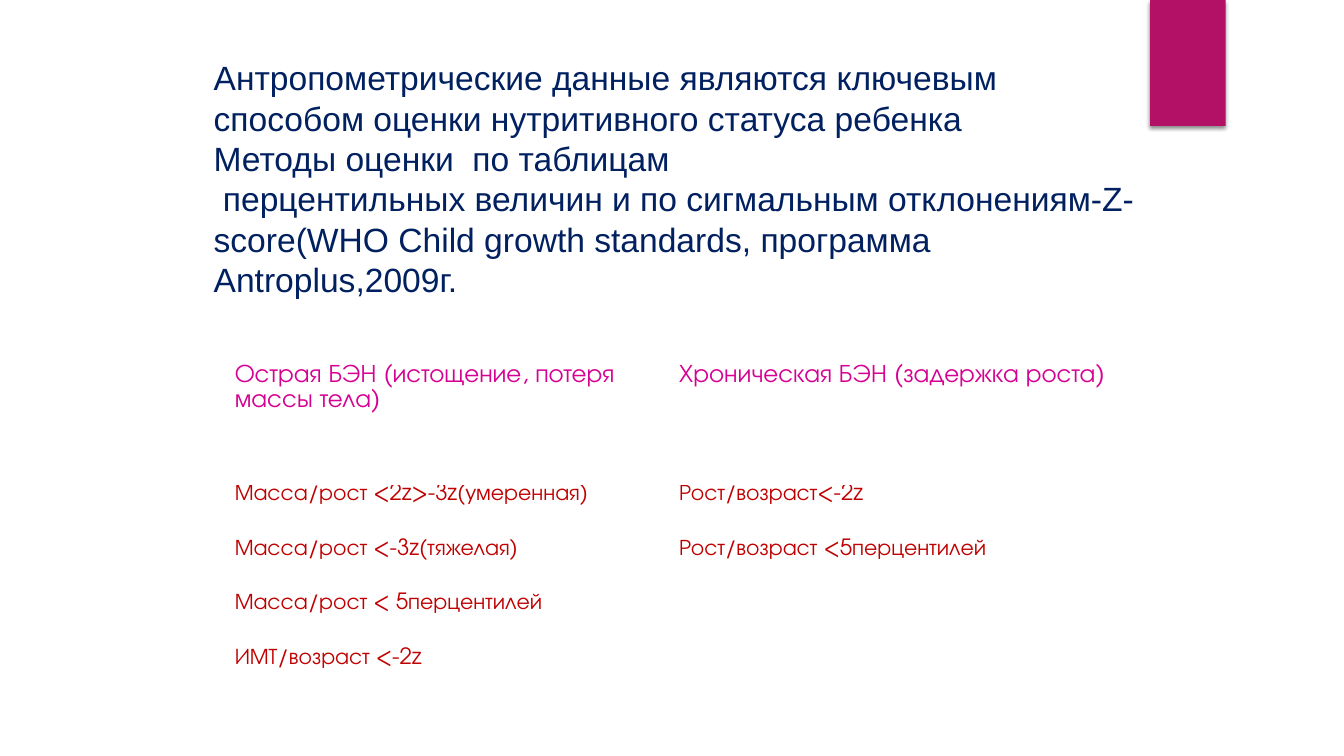
from pptx import Presentation
from pptx.dml.color import RGBColor
from pptx.enum.shapes import MSO_SHAPE as Shape
from pptx.enum.text import MSO_ANCHOR as Anchor, MSO_AUTO_SIZE as Fit, PP_ALIGN as Align
from pptx.oxml import parse_xml
from pptx.util import Pt

NAVY = RGBColor(0x00, 0x20, 0x60)
PINK = RGBColor(0xD6, 0x00, 0x93)
RED = RGBColor(0xC0, 0x00, 0x00)
PLUM = RGBColor(0xB3, 0x11, 0x66)
WHITE = RGBColor(0xFF, 0xFF, 0xFF)
NS = 'xmlns:a="http://schemas.openxmlformats.org/drawingml/2006/main"'

HEAD = [
    "Антропометрические данные являются ключевым способом оценки нутритивного статуса ребенка",
    "Методы оценки  по таблицам",
    " перцентильных величин и по сигмальным отклонениям-Z-score(WHO Child growth standards, программа Antroplus,2009г.",
]
ROWS = [
    ("Острая БЭН (истощение, потеря массы тела)", "Хроническая БЭН (задержка роста)"),
    ("Масса/рост <2z>-3z(умеренная)", "Рост/возраст<-2z"),
    ("Масса/рост <-3z(тяжелая)", "Рост/возраст <5перцентилей"),
    ("Масса/рост < 5перцентилей", ""),
    ("ИМТ/возраст <-2z", ""),
]


def style(para, font, size, color):
    para.font.name = font
    para.font.size = Pt(size)
    para.font.bold = False
    para.font.color.rgb = color


def edge(cell, side, width):
    cell._tc.get_or_add_tcPr().append(parse_xml(
        f'<a:ln{side} {NS} w="{Pt(width)}"><a:solidFill>'
        f'<a:srgbClr val="{WHITE}"/></a:solidFill></a:ln{side}>'))


deck = Presentation()
deck.slide_width, deck.slide_height = Pt(960), Pt(540)
slide = deck.slides.add_slide(deck.slide_layouts[5])
slide.background.fill.solid()
slide.background.fill.fore_color.rgb = WHITE

flag = slide.shapes.add_shape(Shape.RECTANGLE, Pt(821.5), 0, Pt(54), Pt(90))
flag.fill.solid()
flag.fill.fore_color.rgb = PLUM
flag.line.fill.background()
flag._element.spPr.append(parse_xml(
    f'<a:effectLst {NS}><a:outerShdw blurRad="{Pt(3)}" dist="{Pt(2)}" dir="5400000" rotWithShape="0">'
    '<a:srgbClr val="000000"><a:alpha val="45000"/></a:srgbClr></a:outerShdw></a:effectLst>'))

title = slide.shapes.title
title.left, title.top, title.width, title.height = Pt(145.4), Pt(37.4), Pt(674.6), Pt(215.3)
frame = title.text_frame
frame.text = "\n".join(HEAD)
frame.word_wrap = True
frame.auto_size = Fit.NONE
frame.vertical_anchor = Anchor.TOP
for para in frame.paragraphs:
    para.alignment = Align.LEFT
    style(para, "Arial", 24, NAVY)

grid = slide.shapes.add_table(len(ROWS), 2, Pt(162.7), Pt(258.5), Pt(635), Pt(242)).table
grid.first_row = grid.horz_banding = False
for i, row in enumerate(ROWS):
    grid.rows[i].height = Pt(38.9 if i else 86.4)
    for j, text in enumerate(row):
        cell = grid.cell(i, j)
        cell.margin_left = cell.margin_right = Pt(5)
        cell.margin_top = cell.margin_bottom = 0
        for side in "LRTB":
            thick = (i == 0 and side == "B") or (i == 1 and side == "T")
            edge(cell, side, 3 if thick else 1)
        cell.fill.background()
        cell.text_frame.text = text
        para = cell.text_frame.paragraphs[0]
        para.line_spacing = 1.07
        style(para, "TeX Gyre Adventor", 16 if i else 18, RED if i else PINK)

deck.save("out.pptx")
